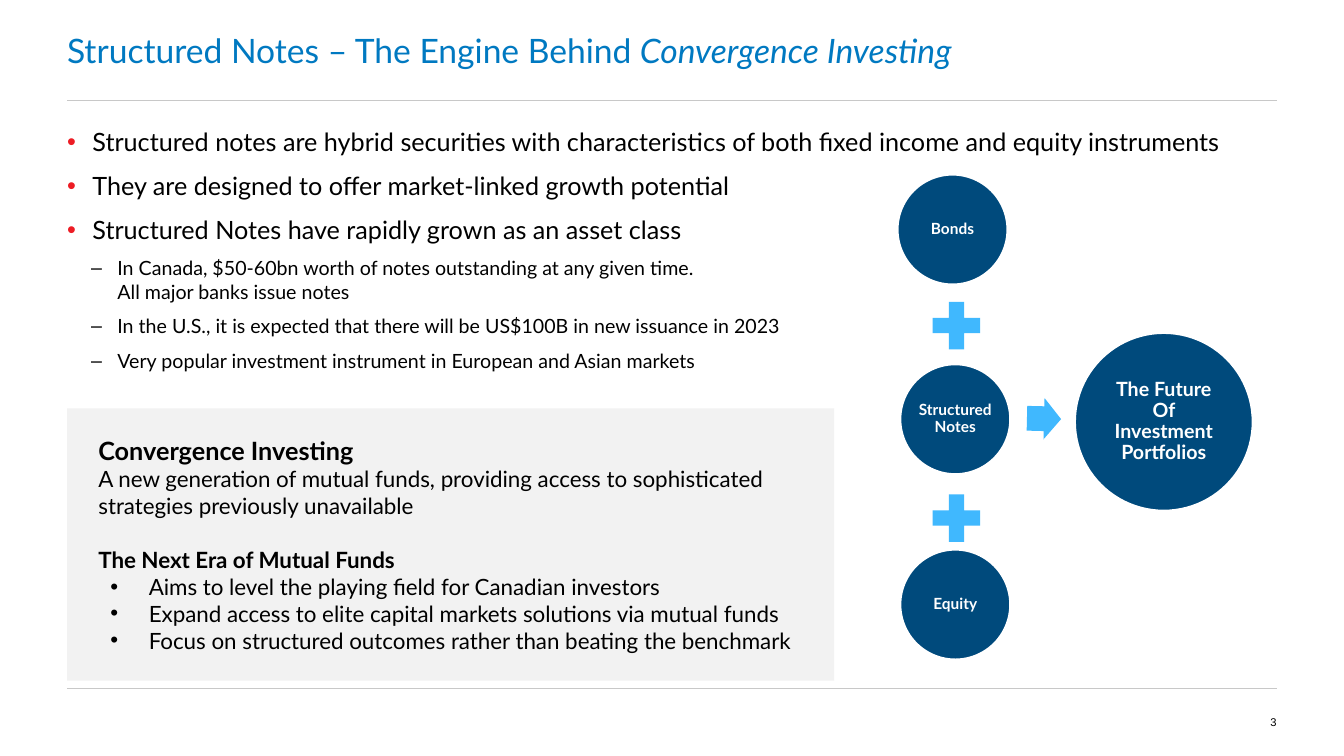
"""Build the slide on structured notes and convergence investing."""
from copy import deepcopy

from lxml import etree
from pptx import Presentation
from pptx import util as u
from pptx.dml.color import RGBColor
from pptx.enum import shapes, text
from pptx.oxml.ns import qn

LEFT, WIDTH = 1.69, 30.48
BLACK, WHITE, NAVY, SKY = "000000", "FFFFFF", "004A7C", "40B8FE"
FONT = {"name": "Lato", "size": u.Pt(18), "bold": False, "italic": False}
MARGINS = ("margin_left", "margin_top", "margin_right", "margin_bottom")

POINT = {"bullet": "•", "bullet_color": "ED1C24", "indent": (0.64, -0.64), "before": 10}
DETAIL = {"bullet": "–", "indent": (1.27, -0.66), "before": 8, "size": 14, "level": 1}
PANEL = {"indent": (0.79, 0), "size": 16}
AIM = {"bullet": "•", "indent": (2.06, -0.97), "size": 16, "level": 2}
LABEL = {"bold": True, "color": WHITE, "align": text.PP_ALIGN.CENTER, "spacing": 0.9}

BODY = [
    ("Structured notes are hybrid securities with characteristics of both fixed income "
     "and equity instruments", POINT | {"before": 0}),
    ("They are designed to offer market-linked growth potential", POINT),
    ("Structured Notes have rapidly grown as an asset class", POINT),
    ("In Canada, $50-60bn worth of notes outstanding at any given time.\v"
     "All major banks issue notes", DETAIL),
    ("In the U.S., it is expected that there will be US$100B in new issuance in 2023", DETAIL),
    ("Very popular investment instrument in European and Asian markets", DETAIL),
]
CONVERGENCE = [
    ("Convergence Investing", PANEL | {"size": 18, "bold": True}),
    ("A new generation of mutual funds, providing access to sophisticated\v"
     "strategies previously unavailable", PANEL),
    ("The Next Era of Mutual Funds", PANEL | {"bold": True, "before": 19.2}),
    ("Aims to level the playing field for Canadian investors", AIM),
    ("Expand access to elite capital markets solutions via mutual funds", AIM),
    ("Focus on structured outcomes rather than beating the benchmark", AIM),
]
CIRCLES = [
    ("Bonds", 22.61, 4.39, 2.79, 11),
    ("Structured Notes", 22.68, 9.17, 2.79, 11),
    ("Equity", 22.68, 13.84, 2.79, 11),
    ("The Future Of Investment Portfolios", 27.08, 8.38, 4.5, 14),
]


def rgb(value):
    """Turn a hex string into a colour."""
    return RGBColor.from_string(value)


def set_values(target, values):
    """Set each named attribute of the target."""
    for name, value in values.items():
        setattr(target, name, value)


def add_bullet(paragraph, character, color, margin, indent):
    """Give a paragraph its hanging indent and bullet."""
    properties = paragraph._p.get_or_add_pPr()
    properties.set("marL", str(u.Cm(margin)))
    properties.set("indent", str(u.Cm(indent)))
    if character:
        bullet_color = etree.SubElement(properties, qn("a:buClr"))
        etree.SubElement(bullet_color, qn("a:srgbClr")).set("val", color)
        etree.SubElement(properties, qn("a:buFont")).set("typeface", "Arial")
        etree.SubElement(properties, qn("a:buChar")).set("char", character)


def format_run(run, style):
    """Apply the font, size and colour of a style to a run."""
    values = {key: style[key] for key in ("name", "bold", "italic") if key in style}
    set_values(run.font, FONT | values | {"size": u.Pt(style.get("size", 18))})
    run.font.color.rgb = rgb(style.get("color", BLACK))


def write(shape, paragraphs, margin=0, anchor=text.MSO_ANCHOR.MIDDLE):
    """Fill a shape with styled paragraphs."""
    frame = shape.text_frame
    set_values(frame, dict.fromkeys(MARGINS, u.Cm(margin)))
    set_values(frame, {"word_wrap": True, "vertical_anchor": anchor})
    for index, (words, style) in enumerate(paragraphs):
        paragraph = frame.add_paragraph() if index else frame.paragraphs[0]
        add_bullet(paragraph, style.get("bullet"), style.get("bullet_color", BLACK),
                   *style.get("indent", (0, 0)))
        set_values(paragraph, {
            "text": words,
            "level": style.get("level", 0),
            "alignment": style.get("align", text.PP_ALIGN.LEFT),
            "space_before": u.Pt(style.get("before", 0)),
            "line_spacing": style.get("spacing", 1.0),
        })
        for run in paragraph.runs:
            format_run(run, style)
        for line_break in paragraph._p.findall(qn("a:br")):
            line_break.append(deepcopy(paragraph.runs[0].font._element))


def add_text(slide, box, paragraphs, **options):
    """Add a text box."""
    shape = slide.shapes.add_textbox(*map(u.Cm, box))
    write(shape, paragraphs, **options)
    return shape


def add_block(slide, kind, box, fill, outline=None):
    """Add a filled preset shape."""
    shape = slide.shapes.add_shape(kind, *map(u.Cm, box))
    shape.shadow.inherit = False
    shape.fill.solid()
    shape.fill.fore_color.rgb = rgb(fill)
    if outline:
        shape.line.color.rgb = rgb(outline)
        shape.line.width = u.Pt(2)
    else:
        shape.line.fill.background()
    return shape


def add_rule(slide, top):
    """Add a thin horizontal rule across the content width."""
    ends = map(u.Cm, (LEFT, top, LEFT + WIDTH, top))
    rule = slide.shapes.add_connector(shapes.MSO_CONNECTOR.STRAIGHT, *ends)
    rule.line.color.rgb = rgb("C8C8C8")
    rule.line.width = u.Pt(0.75)
    etree.SubElement(rule._element.spPr, qn("a:effectLst"))


def add_diagram(slide):
    """Add the circles, plus signs and arrow."""
    preset = shapes.MSO_SHAPE
    for label, left, top, size, points in CIRCLES:
        circle = add_block(slide, preset.OVAL, (left, top, size, size), NAVY, WHITE)
        write(circle, [(label, LABEL | {"size": points})], margin=0.05)
    for top in (7.39, 12.24):
        add_block(slide, preset.MATH_PLUS, (23.29, top, 1.63, 1.63), SKY)
    arrow = add_block(slide, preset.RIGHT_ARROW, (25.88, 10.03, 0.86, 1.04), SKY)
    arrow.rotation = 1.4
    arrow.adjustments[0] = 0.6


def main():
    """Build and save the presentation."""
    presentation = Presentation()
    set_values(presentation, {"slide_width": u.Cm(33.87), "slide_height": u.Cm(19.05)})
    slide = presentation.slides.add_slide(presentation.slide_layouts[6])
    for top in (2.54, 17.35):
        add_rule(slide, top)
    title_style = {"size": 24, "color": "0079C1"}
    title = add_text(slide, (LEFT, 0, WIDTH, 2.54),
                     [("Structured Notes – The Engine Behind ", title_style)])
    emphasis = title.text_frame.paragraphs[0].add_run()
    emphasis.text = "Convergence Investing"
    format_run(emphasis, title_style | {"italic": True})
    add_text(slide, (LEFT, 3.18, WIDTH, 6.35), BODY, anchor=text.MSO_ANCHOR.TOP)
    add_text(slide, (30.48, 17.35, 1.69, 1.69),
             [("3", {"name": "Arial", "size": 8, "align": text.PP_ALIGN.RIGHT})])
    panel = add_block(slide, shapes.MSO_SHAPE.RECTANGLE, (LEFT, 10.29, 19.33, 6.86), "F2F2F2")
    write(panel, CONVERGENCE)
    add_diagram(slide)
    presentation.save("out.pptx")


if __name__ == "__main__":
    main()
